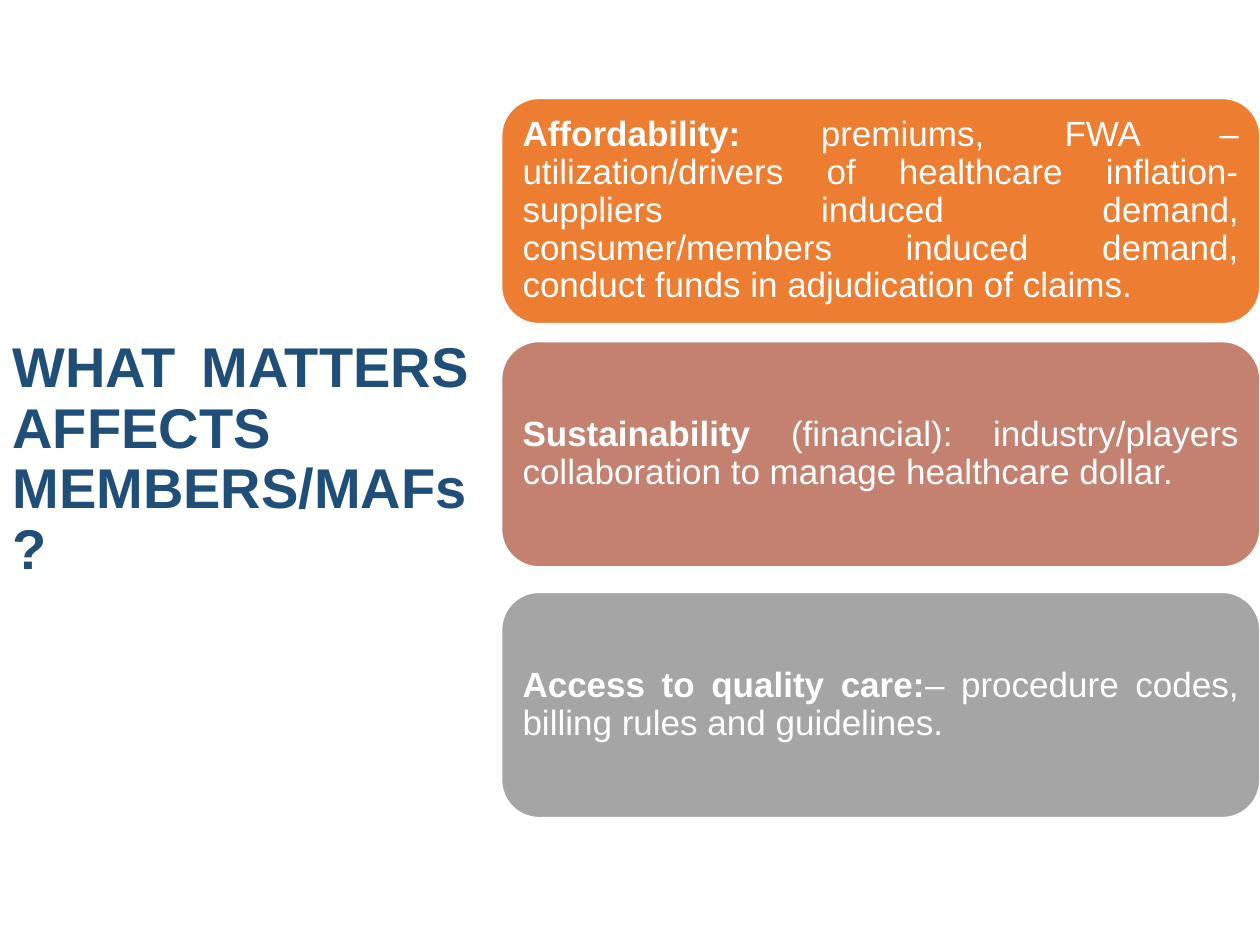
from pptx import Presentation
from pptx.dml.color import RGBColor
from pptx.enum import shapes, text
from pptx.util import Inches, Pt

NAVY = RGBColor(0x1F, 0x4E, 0x79)
WHITE = RGBColor(0xFF, 0xFF, 0xFF)
ORANGE = RGBColor(0xED, 0x7D, 0x31)
ROSE = RGBColor(0xC4, 0x81, 0x70)
GREY = RGBColor(0xA5, 0xA5, 0xA5)

CARDS = [
    (0.78, ORANGE, "Affordability:",
     " premiums, FWA – utilization/drivers of healthcare inflation- suppliers induced demand, "
     "consumer/members induced demand, conduct funds in adjudication of claims."),
    (2.71, ROSE, "Sustainability ",
     "(financial): industry/players collaboration to manage healthcare dollar."),
    (4.7, GREY, "Access to quality care:",
     "– procedure codes, billing rules and guidelines."),
]


def write(frame, runs, size, color):
    """Fill a frame with one justified paragraph of (words, bold) runs."""
    frame.word_wrap = True
    frame.vertical_anchor = text.MSO_ANCHOR.MIDDLE
    para = frame.paragraphs[0]
    para.alignment = text.PP_ALIGN.JUSTIFY
    para.line_spacing = 0.9
    for words, bold in runs:
        run = para.add_run()
        run.text = words
        run.font.name = "Arial"
        run.font.size = Pt(size)
        run.font.bold = bold
        run.font.color.rgb = color


def add_title(slide, left, top, width, height):
    """Place the heading in the given box."""
    box = slide.shapes.add_textbox(Inches(left), Inches(top), Inches(width), Inches(height))
    write(box.text_frame, [("WHAT MATTERS AFFECTS MEMBERS/MAFs?", True)], 32, NAVY)


def add_card(slide, left, top, width, height, fill, lead, body):
    """Place one rounded card with a bold lead and its body."""
    card = slide.shapes.add_shape(shapes.MSO_SHAPE.ROUNDED_RECTANGLE, Inches(left),
                                  Inches(top), Inches(width), Inches(height))
    card.shadow.inherit = False
    card.fill.solid()
    card.fill.fore_color.rgb = fill
    card.line.color.rgb = WHITE
    card.line.width = Pt(1)
    frame = card.text_frame
    frame.margin_left = frame.margin_right = Inches(0.08)
    frame.margin_top = frame.margin_bottom = Inches(0.08)
    write(frame, [(lead, True), (body, False)], 20, WHITE)


def main():
    """Build the slide and save it."""
    deck = Presentation()
    deck.slide_width, deck.slide_height = Inches(10), Inches(7.5)
    slide = deck.slides.add_slide(deck.slide_layouts[6])
    add_title(slide, 0, 0.61, 3.82, 6.09)
    for top, fill, lead, body in CARDS:
        add_card(slide, 3.98, top, 6.02, 1.79, fill, lead, body)
    deck.save("out.pptx")


if __name__ == "__main__":
    main()
